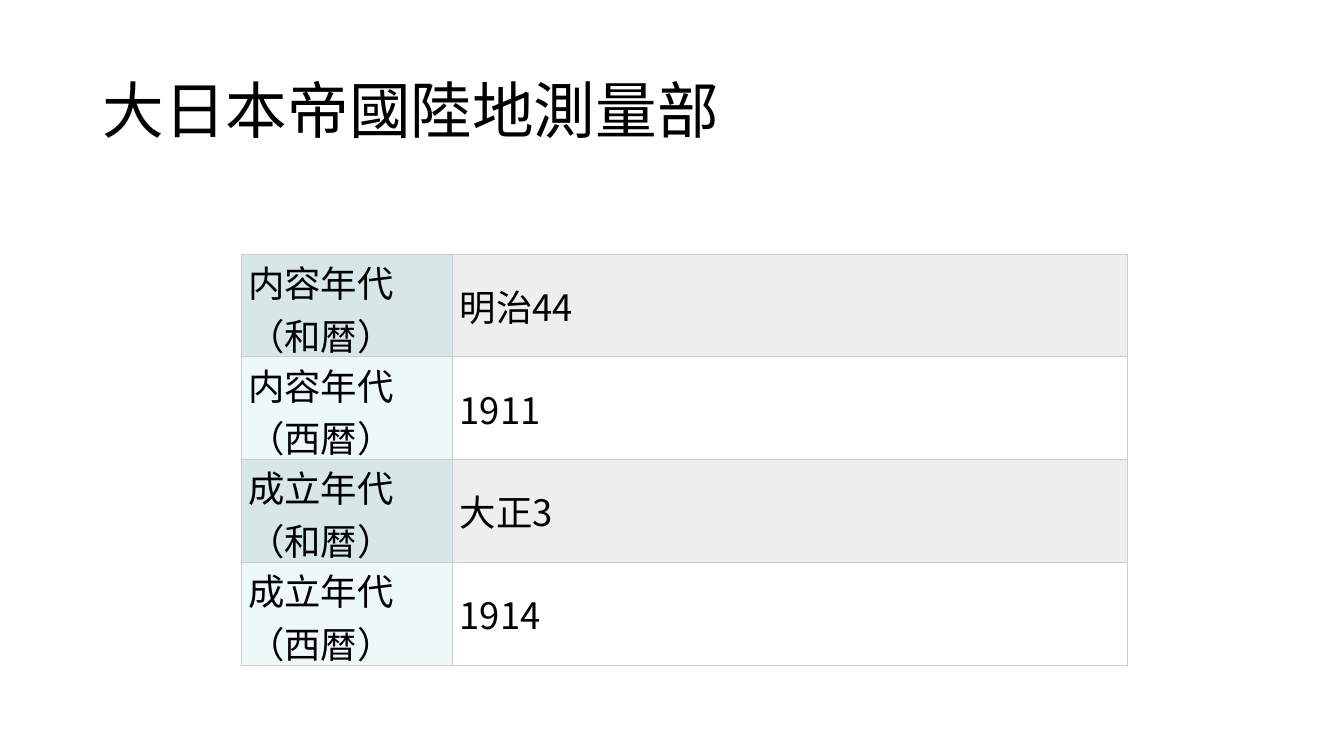
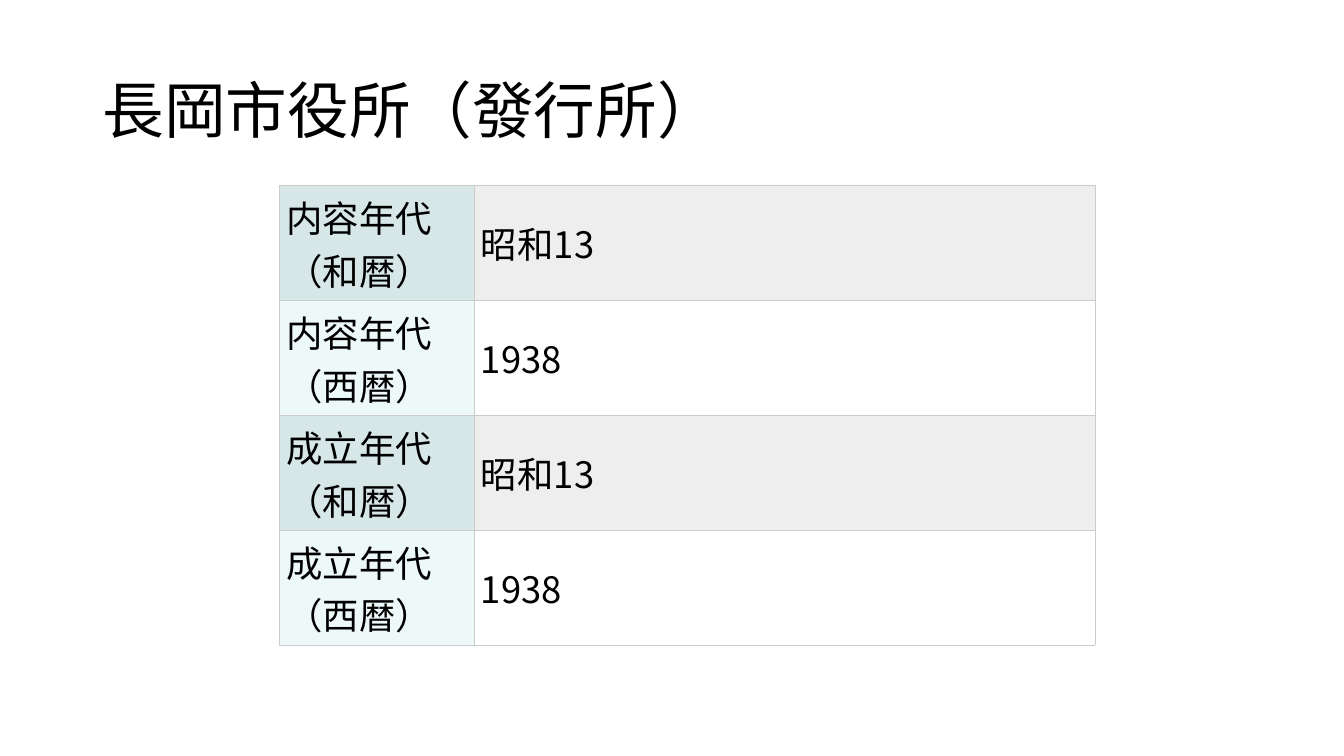
"""Build two slides, each a title over a table of dates."""
import pptx
import pptx.dml.color
import pptx.enum.text
import pptx.oxml
import pptx.oxml.ns
import pptx.util

HEADS = ["内容年代（和暦）", "内容年代（西暦）", "成立年代（和暦）", "成立年代（西暦）"]
PAGES = [
    {"title": "大日本帝國陸地測量部", "dates": ["明治44", "1911", "大正3", "1914"],
     "at": (2.39, 2.52), "cols": (2.1, 6.69), "row": 1.02},
    {"title": "長岡市役所（發行所）", "dates": ["昭和13", "1938", "昭和13", "1938"],
     "at": (2.77, 1.84), "cols": (1.93, 6.16), "row": 1.14},
]
BANDS = [("D7E7E7", "EEEEEE"), ("EDF8F8", "FFFFFF")]
INK, EDGE = "000000", "CCCCCC"
LATIN, ASIAN = "Arial", "Noto Sans CJK JP"
MID = pptx.enum.text.MSO_ANCHOR.MIDDLE
inch = pptx.util.Inches


def color(code):
    return pptx.dml.color.RGBColor.from_string(code)


def write(para, text, size, face):
    run = para.add_run()
    run.text = text
    run.font.size = pptx.util.Pt(size)
    run.font.name = face
    run.font.color.rgb = color(INK)
    asian = pptx.oxml.parse_xml(
        f'<a:ea {pptx.oxml.ns.nsdecls("a")} typeface="{ASIAN}"/>')
    run.font._element.find(pptx.oxml.ns.qn("a:latin")).addnext(asian)


def border(cell):
    props = cell._tc.get_or_add_tcPr()
    for spot, side in enumerate("LRTB"):
        props.insert(spot, pptx.oxml.parse_xml(
            f'<a:ln{side} {pptx.oxml.ns.nsdecls("a")} w="6350"><a:solidFill>'
            f'<a:srgbClr val="{EDGE}"/></a:solidFill></a:ln{side}>'))


def title(slide, text):
    box = slide.shapes.add_textbox(inch(0.92), inch(0.4), inch(11.5), inch(1.45))
    frame = box.text_frame
    frame.word_wrap = True
    frame.vertical_anchor = MID
    para = frame.paragraphs[0]
    para.line_spacing = 0.9
    write(para, text, 44, LATIN)


def grid(slide, page):
    rows = list(zip(HEADS, page["dates"]))
    left, top = page["at"]
    table = slide.shapes.add_table(
        len(rows), 2, inch(left), inch(top),
        inch(sum(page["cols"])), inch(page["row"] * len(rows))).table
    table.first_row = table.horz_banding = False
    for col, width in zip(table.columns, page["cols"]):
        col.width = inch(width)
    for r, row in enumerate(rows):
        table.rows[r].height = inch(page["row"])
        for c, text in enumerate(row):
            cell = table.cell(r, c)
            cell.margin_left = cell.margin_right = inch(0.07)
            cell.margin_top = cell.margin_bottom = inch(0.01)
            cell.vertical_anchor = MID
            cell.fill.solid()
            cell.fill.fore_color.rgb = color(BANDS[r % 2][c])
            border(cell)
            write(cell.text_frame.paragraphs[0], text, 26, ASIAN)


def main():
    deck = pptx.Presentation()
    deck.slide_width, deck.slide_height = inch(13.33), inch(7.5)
    for page in PAGES:
        slide = deck.slides.add_slide(deck.slide_layouts[6])
        title(slide, page["title"])
        grid(slide, page)
    deck.save("out.pptx")


if __name__ == "__main__":
    main()
